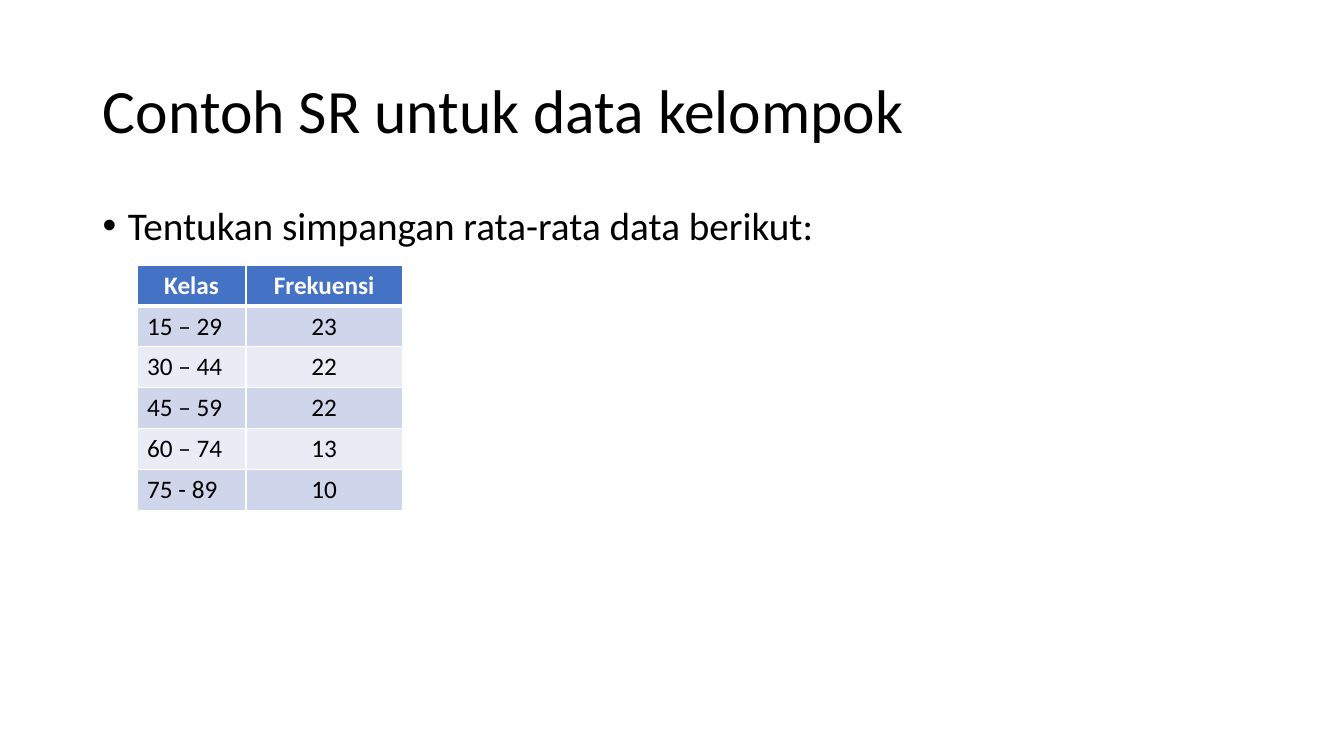
from pptx import Presentation
from pptx.dml.color import RGBColor
from pptx.enum.text import MSO_ANCHOR, MSO_AUTO_SIZE, PP_ALIGN
from pptx.oxml import parse_xml
from pptx.oxml.ns import nsdecls
from pptx.util import Inches, Pt

LEFT, CENTER = PP_ALIGN.LEFT, PP_ALIGN.CENTER
TOP, MIDDLE = MSO_ANCHOR.TOP, MSO_ANCHOR.MIDDLE
NO_FIT = MSO_AUTO_SIZE.NONE
TITLE_ONLY = 5


class Theme:
    font = "Calibri"
    ink, paper = "000000", "FFFFFF"
    head, bands = "4472C4", ("CFD5EA", "E9EBF5")
    title, body, cell = 44, 28, 18
    thin, thick = 1, 3


class Deck:
    def __init__(self, theme):
        self.theme = theme
        self.prs = Presentation()
        self.prs.slide_width = Inches(13.33)
        self.prs.slide_height = Inches(7.5)
        layout = self.prs.slide_layouts[TITLE_ONLY]
        self.slide = self.prs.slides.add_slide(layout)

    def apply(self, target, values):
        for name, value in values.items():
            setattr(target, name, value)

    def label(self, frame, text, size, color, bold=False, **format):
        para = frame.paragraphs[0]
        self.apply(para, format)
        run = para.add_run()
        run.text = text
        self.apply(run.font, {"name": self.theme.font, "size": Pt(size), "bold": bold})
        run.font.color.rgb = RGBColor.from_string(color)
        return para

    def place(self, shape, box, anchor):
        names = ("left", "top", "width", "height")
        self.apply(shape, dict(zip(names, map(Inches, box))))
        frame = shape.text_frame
        self.apply(frame, {"word_wrap": True, "auto_size": NO_FIT,
                           "vertical_anchor": anchor})
        return frame

    def title(self, text, box):
        frame = self.place(self.slide.shapes.title, box, MIDDLE)
        self.label(frame, text, self.theme.title, self.theme.ink,
                   alignment=LEFT, line_spacing=0.9)

    def bullet(self, text, box):
        shape = self.slide.shapes.add_textbox(*map(Inches, box))
        frame = self.place(shape, box, TOP)
        para = self.label(frame, text, self.theme.body, self.theme.ink,
                          alignment=LEFT, line_spacing=0.9, space_before=Pt(10))
        props = para._p.get_or_add_pPr()
        props.set("marL", str(Inches(0.25)))
        props.set("indent", str(Inches(-0.25)))
        props.append(parse_xml(f'<a:buFont {nsdecls("a")} typeface="Arial"/>'))
        props.append(parse_xml(f'<a:buChar {nsdecls("a")} char="•"/>'))

    def border(self, cell, widths):
        props = cell._tc.get_or_add_tcPr()
        for spot, (side, width) in enumerate(widths.items()):
            props.insert(spot, parse_xml(
                f'<a:ln{side} {nsdecls("a")} w="{Pt(width)}"><a:solidFill>'
                f'<a:srgbClr val="{self.theme.paper}"/></a:solidFill></a:ln{side}>'))

    def table(self, rows, box, widths):
        theme = self.theme
        frame = self.slide.shapes.add_table(len(rows), len(widths), *map(Inches, box))
        grid = frame.table
        for column, width in zip(grid.columns, widths):
            column.width = Inches(width)
        for r, row in enumerate(rows):
            head = r == 0
            fill = theme.head if head else theme.bands[(r - 1) % 2]
            color = theme.paper if head else theme.ink
            for c, text in enumerate(row):
                cell = grid.cell(r, c)
                cell.fill.solid()
                cell.fill.fore_color.rgb = RGBColor.from_string(fill)
                self.label(cell.text_frame, text, theme.cell, color, head,
                           alignment=CENTER if head or c else LEFT)
                sides = dict.fromkeys("LRTB", theme.thin)
                if head:
                    sides["B"] = theme.thick
                elif r == 1:
                    sides["T"] = theme.thick
                self.border(cell, sides)


def main():
    deck = Deck(Theme)

    # Heading and task
    deck.title("Contoh SR untuk data kelompok", (0.92, 0.4, 11.5, 1.45))
    deck.bullet("Tentukan simpangan rata-rata data berikut:", (0.92, 2, 11.5, 4.76))

    # Frequency table
    rows = [
        ("Kelas", "Frekuensi"),
        ("15 – 29", "23"),
        ("30 – 44", "22"),
        ("45 – 59", "22"),
        ("60 – 74", "13"),
        ("75 - 89", "10"),
    ]
    deck.table(rows, (1.36, 2.63, 2.63, 2.43), (1.08, 1.55))

    deck.prs.save("out.pptx")


if __name__ == "__main__":
    main()
